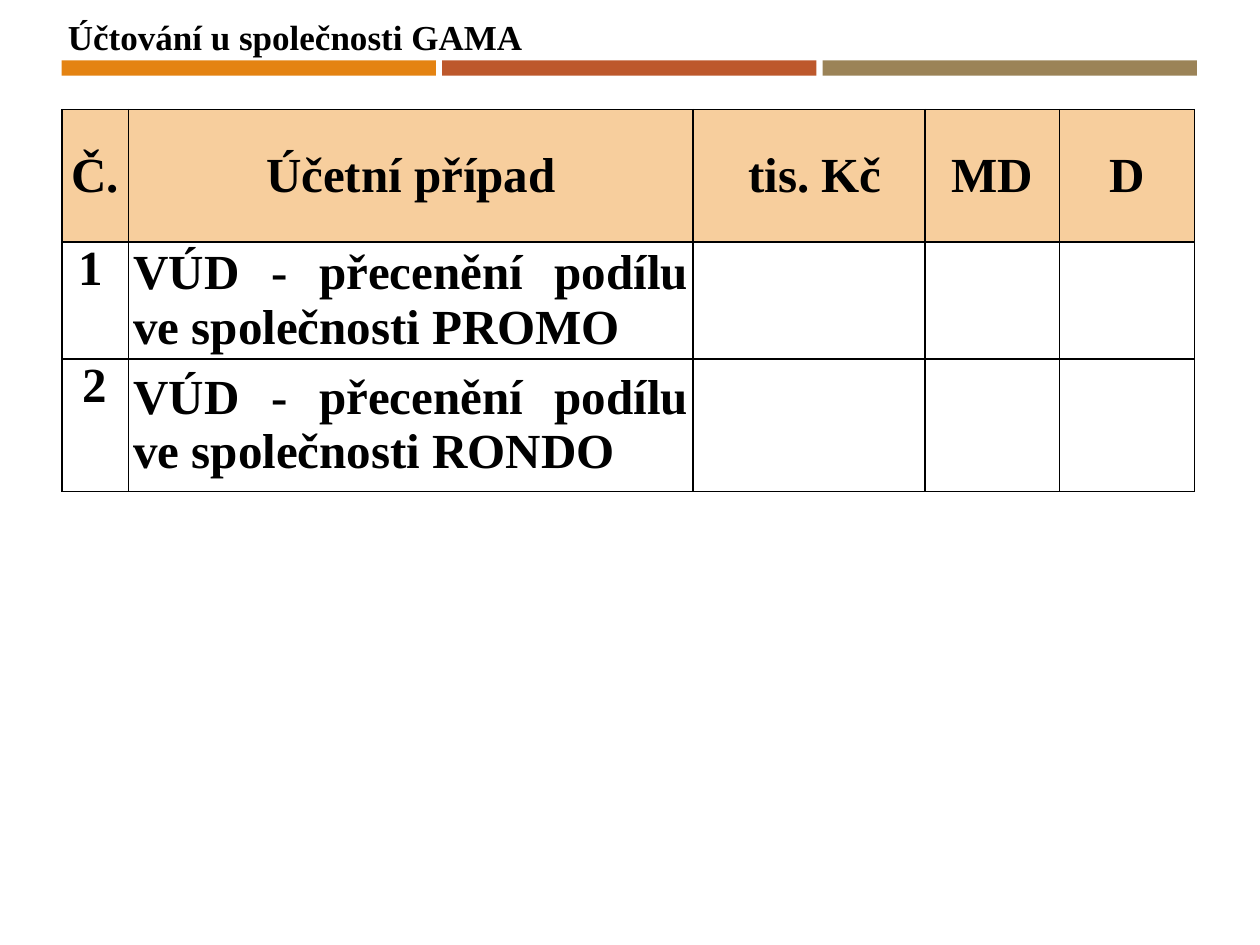
"""Build the slide with the accounting table of the company GAMA."""
import lxml.etree
import pptx
import pptx.dml.color
import pptx.enum.shapes
import pptx.enum.text
import pptx.oxml
import pptx.oxml.ns
import pptx.util

Inches = pptx.util.Inches
Align = pptx.enum.text.PP_ALIGN
Anchor = pptx.enum.text.MSO_ANCHOR


def color(hex_string):
    return pptx.dml.color.RGBColor.from_string(hex_string)


def write(frame, text, size=28, align=Align.LEFT, ink="000000"):
    paragraph = frame.paragraphs[0]
    paragraph.alignment = align
    run = paragraph.add_run()
    run.text = text
    run.font.name = "Times New Roman"
    run.font.size = pptx.util.Pt(size)
    run.font.bold = True
    run.font.color.rgb = color(ink)


presentation = pptx.Presentation()
presentation.slide_width = Inches(10)
presentation.slide_height = Inches(7.5)
slide = presentation.slides.add_slide(presentation.slide_layouts[6])

for position, band_color in enumerate(["E48312", "BD582C", "9B8357"]):
    band = slide.shapes.add_shape(
        pptx.enum.shapes.MSO_SHAPE.RECTANGLE,
        Inches(0.49 + position * 3.02), Inches(0.48), Inches(2.97), Inches(0.12))
    band.shadow.inherit = False
    band.fill.solid()
    band.fill.fore_color.rgb = color(band_color)
    band.line.fill.background()

column_widths = [0.53, 4.48, 1.84, 1.07, 1.07]
row_heights = [1.05, 0.93, 1.05]
entries = [
    ["Č.", "Účetní případ", " tis. Kč", "MD", "D"],
    [" 1", "VÚD - přecenění podílu ve společnosti PROMO", "", "", ""],
    ["2", "VÚD - přecenění podílu ve společnosti RONDO", "", "", ""],
]
ledger = slide.shapes.add_table(
    len(row_heights), len(column_widths), Inches(0.49), Inches(0.87),
    Inches(sum(column_widths)), Inches(sum(row_heights))).table
for column, width in zip(ledger.columns, column_widths):
    column.width = Inches(width)
for row, height in zip(ledger.rows, row_heights):
    row.height = Inches(height)

for row_number, row_entries in enumerate(entries):
    for column_number, entry in enumerate(row_entries):
        cell = ledger.cell(row_number, column_number)
        cell.margin_left = cell.margin_right = Inches(0.04)
        cell.margin_top = cell.margin_bottom = 0
        is_header = row_number == 0
        is_case = column_number == 1
        cell.vertical_anchor = Anchor.MIDDLE if is_header or is_case else Anchor.TOP
        if entry:
            align = Align.JUSTIFY if is_case and not is_header else Align.CENTER
            if entry == " 1":
                align = Align.LEFT
            write(cell.text_frame, entry, align=align)

        properties = cell._tc.get_or_add_tcPr()
        for side in ["lnL", "lnR", "lnT", "lnB"]:
            border = lxml.etree.SubElement(
                properties, pptx.oxml.ns.qn(f"a:{side}"), w=str(pptx.util.Pt(1)))
            border_fill = lxml.etree.SubElement(border, pptx.oxml.ns.qn("a:solidFill"))
            lxml.etree.SubElement(
                border_fill, pptx.oxml.ns.qn("a:srgbClr"), val="000000")
        if is_header:
            cell.fill.solid()
            cell.fill.fore_color.rgb = color("F7CE9D")
        else:
            cell.fill.background()

heading = slide.shapes.add_textbox(
    Inches(0.44), Inches(0.07), Inches(3.84), Inches(0.44)).text_frame
heading.word_wrap = False
heading.auto_size = pptx.enum.text.MSO_AUTO_SIZE.SHAPE_TO_FIT_TEXT
write(heading, "Účtování u společnosti GAMA", size=20)

presentation.save("out.pptx")
